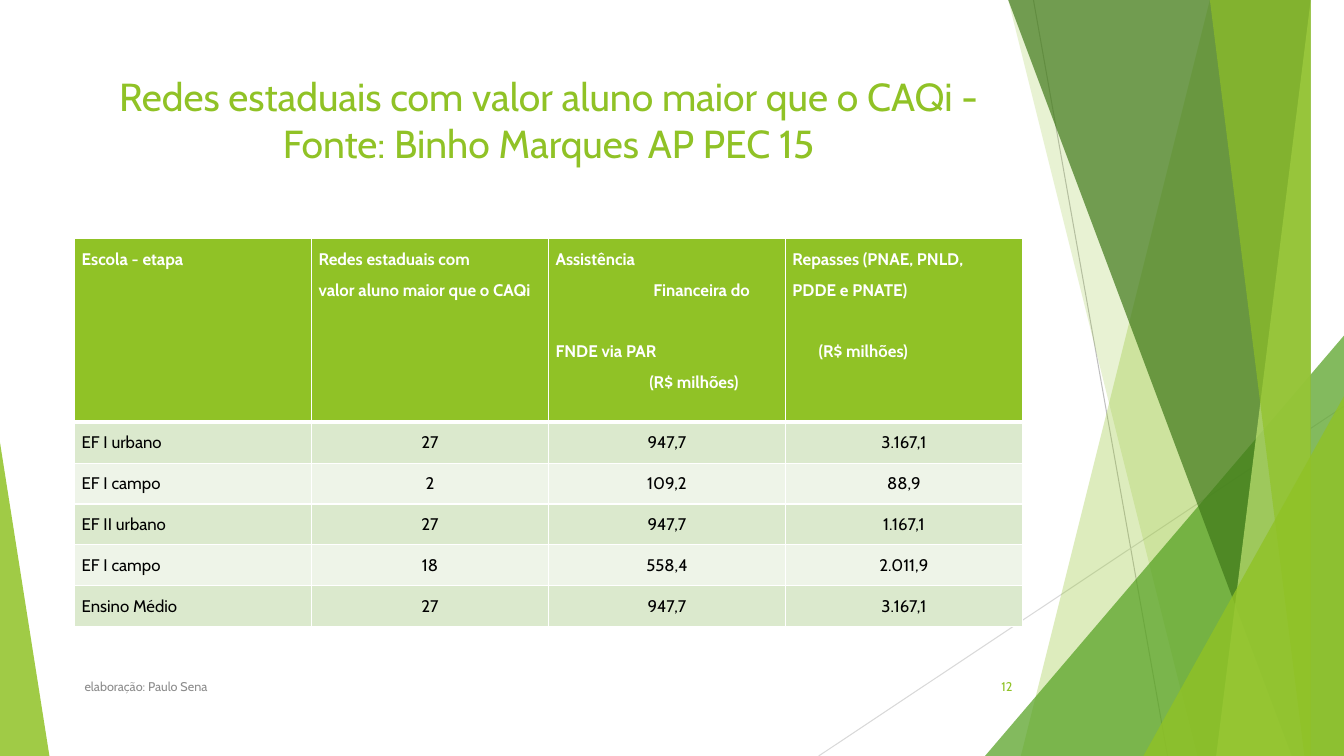
import pptx
import pptx.util
import pptx.oxml
import pptx.dml.color
import pptx.enum.text
import pptx.enum.shapes

Inches = pptx.util.Inches
Pt = pptx.util.Pt
RGBColor = pptx.dml.color.RGBColor
ALIGN = pptx.enum.text.PP_ALIGN
ANCHOR = pptx.enum.text.MSO_ANCHOR
SHAPE = pptx.enum.shapes.MSO_SHAPE
NAMESPACE = 'xmlns:a="http://schemas.openxmlformats.org/drawingml/2006/main"'

THEME = {
    "font": "Cabin",
    "green": "90C226", "mid_green": "54A021", "dark_green": "3F7819", "pale_green": "C0E474",
    "band_dark": "DBE9CD", "band_light": "EEF4E8",
    "white": "FFFFFF", "black": "000000", "gray": "8C8C8C",
    "line_dark": "BFBFBF", "line_light": "D9D9D9",
    "title_size": 27.9, "table_size": 12, "footer_size": 9,
}


def write_text(paragraph, text, size, color, bold=False, **paragraph_format):
    for name, value in paragraph_format.items():
        setattr(paragraph, name, value)
    run = paragraph.add_run()
    run.text = text
    font_format = {"name": THEME["font"], "size": Pt(THEME[size]), "bold": bold}
    for name, value in font_format.items():
        setattr(run.font, name, value)
    run.font.color.rgb = RGBColor.from_string(THEME[color])


def paint(shape, color, opacity):
    shape.shadow.inherit = False
    shape.line.fill.background()
    shape.fill.solid()
    shape.fill.fore_color.rgb = RGBColor.from_string(THEME[color])
    color_element = shape.fill._xPr.find(".//" + pptx.oxml.ns.qn("a:srgbClr"))
    color_element.append(pptx.oxml.parse_xml(f'<a:alpha {NAMESPACE} val="{opacity * 1000}"/>'))


presentation = pptx.Presentation()
presentation.slide_width = Inches(13.33)
presentation.slide_height = Inches(7.5)
slide = presentation.slides.add_slide(presentation.slide_layouts[5])

# Thin background lines
for x1, y1, x2, y2, color in [
    (10.25, 0, 11.58, 7.5, "line_dark"),
    (13.33, 4.03, 8.12, 7.5, "line_light"),
]:
    line = slide.shapes.add_connector(
        pptx.enum.shapes.MSO_CONNECTOR.STRAIGHT, Inches(x1), Inches(y1), Inches(x2), Inches(y2))
    line.line.width = Pt(0.75)
    line.line.color.rgb = RGBColor.from_string(THEME[color])
    line._element.spPr.append(pptx.oxml.parse_xml(f"<a:effectLst {NAMESPACE}/>"))

# Translucent facets: a band runs from its top left and bottom left corners to the
# slide's right edge; a triangle has a left, top, width, height and apex position
facets = [
    ("band", (12.28, 10.04), "green", 30),
    ("band", (10.5, 11.83), "green", 20),
    ("triangle", (9.77, 3.33, 3.56, 4.17, 1), "mid_green", 72),
    ("band", (10.21, 12.91), "dark_green", 70),
    ("band", (13.03, 11.92), "pale_green", 70),
    ("band", (11.96, 13.18), "green", 65),
    ("triangle", (11.34, 3.93, 1.99, 3.57, 1), "green", 80),
    ("triangle", (0, 4.39, 0.49, 3.11, 0), "green", 85),
]
for kind, geometry, color, opacity in facets:
    if kind == "band":
        top_left, bottom_left = geometry
        builder = slide.shapes.build_freeform(top_left, 0, scale=Inches(1))
        builder.add_line_segments([(13.33, 0), (13.33, 7.5), (bottom_left, 7.5)], close=True)
        facet = builder.convert_to_shape()
    else:
        *box, apex = geometry
        facet = slide.shapes.add_shape(SHAPE.ISOSCELES_TRIANGLE, *map(Inches, box))
        facet.adjustments[0] = apex
    paint(facet, color, opacity)

# Title
title = slide.shapes.title
title_format = {"left": 0.74, "top": 0.67, "width": 9.4, "height": 1.44}
for name, value in title_format.items():
    setattr(title, name, Inches(value))
frame_format = {"word_wrap": True, "vertical_anchor": ANCHOR.TOP,
                "auto_size": pptx.enum.text.MSO_AUTO_SIZE.NONE}
for name, value in frame_format.items():
    setattr(title.text_frame, name, value)
write_text(title.text_frame.paragraphs[0],
           "Redes estaduais com valor aluno maior que o CAQi - Fonte: Binho Marques AP PEC 15",
           "title_size", "green", alignment=ALIGN.CENTER)

# Table content: header lines are (text, left indent in inches, points before)
header = [
    [("Escola - etapa", 0, 0)],
    [("Redes estaduais com", 0, 0), ("valor aluno maior que o CAQi", 0, 0)],
    [("Assistência", 0, 0), ("Financeira do", 0.97, 0),
     ("FNDE via PAR", 0, 22), ("(R$ milhões)", 0.93, 0)],
    [("Repasses (PNAE, PNLD,", 0, 0), ("PDDE e PNATE)", 0, 0), ("(R$ milhões)", 0.26, 22)],
]
body = [
    ("EF I urbano", "27", "947,7", "3.167,1"),
    ("EF I campo", "2", "109,2", "88,9"),
    ("EF II urbano", "27", "947,7", "1.167,1"),
    ("EF I campo", "18", "558,4", "2.011,9"),
    ("Ensino Médio", "27", "947,7", "3.167,1"),
]
rows = [header] + [[[(text, 0, 0)] for text in row] for row in body]

# Table
table = slide.shapes.add_table(
    len(rows), len(header), Inches(0.74), Inches(2.37), Inches(9.4), Inches(3.85)).table
table.first_row = table.horz_banding = False
for column in table.columns:
    column.width = Inches(2.35)
cell_format = {"margin_left": Inches(0.07), "margin_right": Inches(0.07),
               "margin_top": 0, "margin_bottom": 0, "vertical_anchor": ANCHOR.TOP}
for row_index, row in enumerate(rows):
    is_header = row_index == 0
    table.rows[row_index].height = Inches(1.82 if is_header else 0.405)
    fill = "green" if is_header else ("band_light", "band_dark")[row_index % 2]
    for column_index, lines in enumerate(row):
        cell = table.cell(row_index, column_index)
        for name, value in cell_format.items():
            setattr(cell, name, value)
        cell.fill.solid()
        cell.fill.fore_color.rgb = RGBColor.from_string(THEME[fill])
        centered = not is_header and column_index > 0
        for line_index, (text, indent, space) in enumerate(lines):
            frame = cell.text_frame
            paragraph = frame.add_paragraph() if line_index else frame.paragraphs[0]
            write_text(paragraph, text, "table_size", "white" if is_header else "black", is_header,
                       alignment=ALIGN.CENTER if centered else ALIGN.LEFT,
                       line_spacing=1.5, space_before=Pt(space))
            paragraph._p.get_or_add_pPr().set("marL", str(Inches(indent)))
        # White borders, thicker under the header
        for position, side in enumerate("LRTB"):
            thick = (side == "B" and row_index == 0) or (side == "T" and row_index == 1)
            border = pptx.oxml.parse_xml(
                f'<a:ln{side} {NAMESPACE} w="{Pt(3 if thick else 1)}"><a:solidFill>'
                f'<a:srgbClr val="{THEME["white"]}"/></a:solidFill></a:ln{side}>')
            cell._tc.get_or_add_tcPr().insert(position, border)

# Footer and slide number
for text, left, width, color, alignment in [
    ("elaboração: Paulo Sena", 0.74, 6.89, "gray", ALIGN.LEFT),
    ("12", 9.39, 0.75, "green", ALIGN.RIGHT),
]:
    box = slide.shapes.add_textbox(Inches(left), Inches(6.61), Inches(width), Inches(0.4))
    box.text_frame.word_wrap = True
    box.text_frame.vertical_anchor = ANCHOR.MIDDLE
    write_text(box.text_frame.paragraphs[0], text, "footer_size", color, alignment=alignment)

presentation.save("out.pptx")
